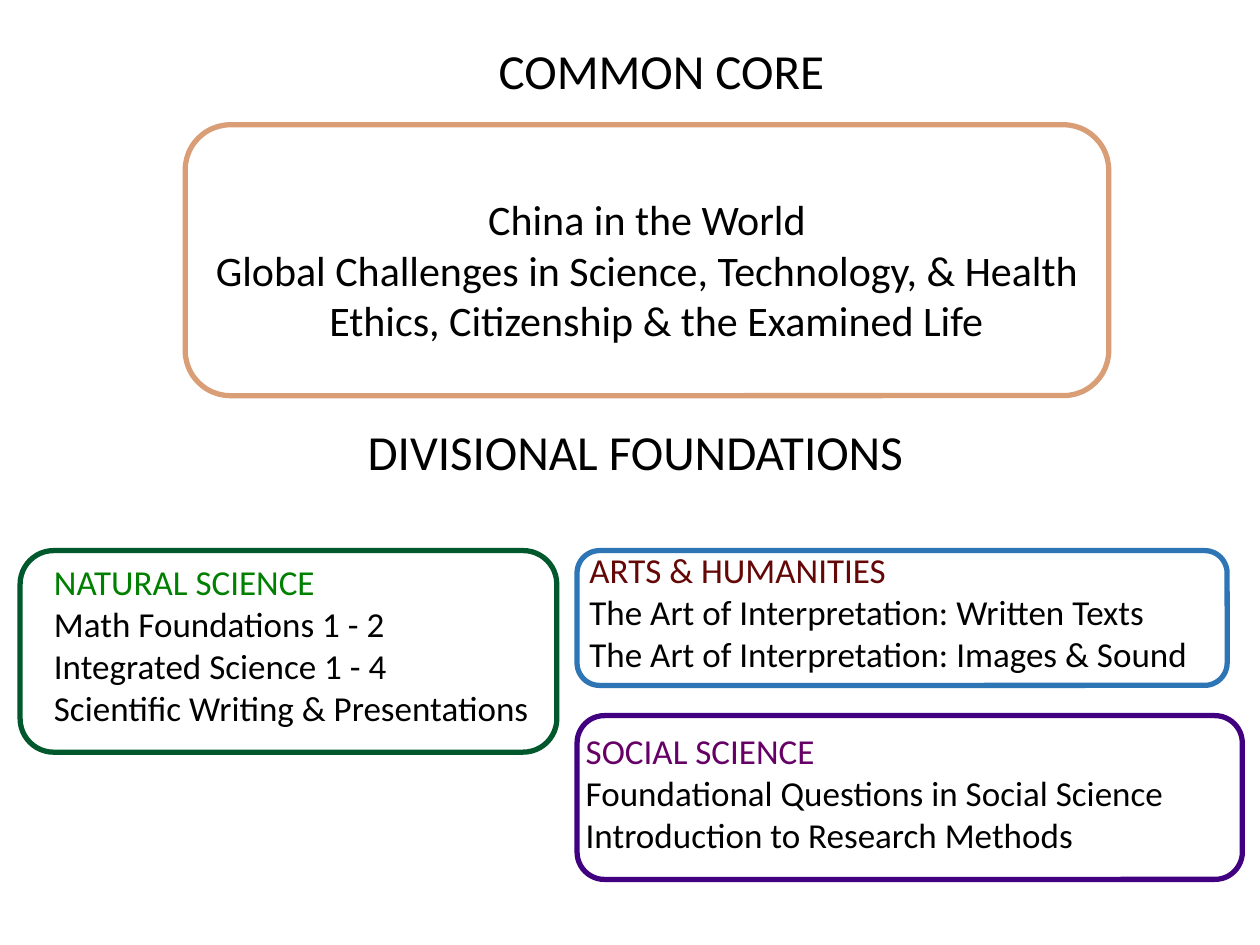
import pptx
import pptx.util
import pptx.dml.color
import pptx.enum.shapes
import pptx.enum.text

Inches = pptx.util.Inches
ALIGN = pptx.enum.text.PP_ALIGN

THEME = {
    "font": "Calibri",
    "text": "000000",
    "title_size": 28,
    "core_size": 24,
    "list_size": 20,
    "outline": 3,
}

TITLES = [
    ("COMMON CORE", (3.86, 0.27, 2.82, 0.57)),
    ("DIVISIONAL FOUNDATIONS", (2.82, 3.3, 4.54, 0.57)),
]

CORE = {
    "frame": (1.47, 0.99, 7.33, 2.15),
    "line": "D99E76",
    "text": (1.53, 1.49, 7.21, 1.34),
    "courses": [
        "China in the World",
        "Global Challenges in Science, Technology, & Health",
        "Ethics, Citizenship & the Examined Life",
    ],
}

DIVISIONS = [
    {
        "name": "NATURAL SCIENCE",
        "color": "008000",
        "line": "00582C",
        "frame": (0.16, 4.37, 4.26, 1.6),
        "text": (0.33, 4.4, 4.26, 1.43),
        "courses": [
            "Math Foundations 1 - 2",
            "Integrated Science 1 - 4",
            "Scientific Writing & Presentations",
        ],
    },
    {
        "name": "SOCIAL SCIENCE",
        "color": "660066",
        "line": "400080",
        "frame": (4.58, 5.68, 5.28, 1.3),
        "text": (4.55, 5.74, 5.28, 1.11),
        "courses": [
            "Foundational Questions in Social Science",
            "Introduction to Research Methods",
        ],
    },
    {
        "name": "ARTS & HUMANITIES",
        "color": "640706",
        "line": "2E75B6",
        "frame": (4.58, 4.37, 5.16, 1.07),
        "text": (4.58, 4.3, 5.16, 1.11),
        "courses": [
            "The Art of Interpretation: Written Texts",
            "The Art of Interpretation: Images & Sound",
        ],
    },
]


def rgb(value):
    return pptx.dml.color.RGBColor.from_string(value)


def add_frame(s, box, color):
    sp = s.shapes.add_shape(
        pptx.enum.shapes.MSO_SHAPE.ROUNDED_RECTANGLE, *map(Inches, box)
    )
    sp.shadow.inherit = False
    sp.fill.background()
    sp.line.color.rgb = rgb(color)
    sp.line.width = pptx.util.Pt(THEME["outline"])


def add_text(s, box, lines, size, align=ALIGN.LEFT, wrap=True):
    tf = s.shapes.add_textbox(*map(Inches, box)).text_frame
    tf.word_wrap = wrap
    for i, (text, color) in enumerate(lines):
        p = tf.add_paragraph() if i else tf.paragraphs[0]
        p.text = text
        p.alignment = align
        p.font.name = THEME["font"]
        p.font.size = pptx.util.Pt(size)
        p.font.color.rgb = rgb(color)
    return tf


def plain(lines):
    return [(line, THEME["text"]) for line in lines]


def main():
    prs = pptx.Presentation()
    prs.slide_width, prs.slide_height = Inches(10), Inches(7.5)
    s = prs.slides.add_slide(prs.slide_layouts[6])

    for d in DIVISIONS:
        add_frame(s, d["frame"], d["line"])
    for d in DIVISIONS:
        lines = [(d["name"], d["color"])] + plain(d["courses"])
        add_text(s, d["text"], lines, THEME["list_size"])

    tf = add_text(
        s, CORE["text"], plain(CORE["courses"]), THEME["core_size"], ALIGN.CENTER
    )
    pPr = tf.paragraphs[-1]._p.get_or_add_pPr()
    pPr.set("marL", str(Inches(0.15)))
    pPr.set("indent", "0")
    add_frame(s, CORE["frame"], CORE["line"])

    for text, box in TITLES:
        add_text(s, box, plain([text]), THEME["title_size"], wrap=False)

    prs.save("out.pptx")


if __name__ == "__main__":
    main()
